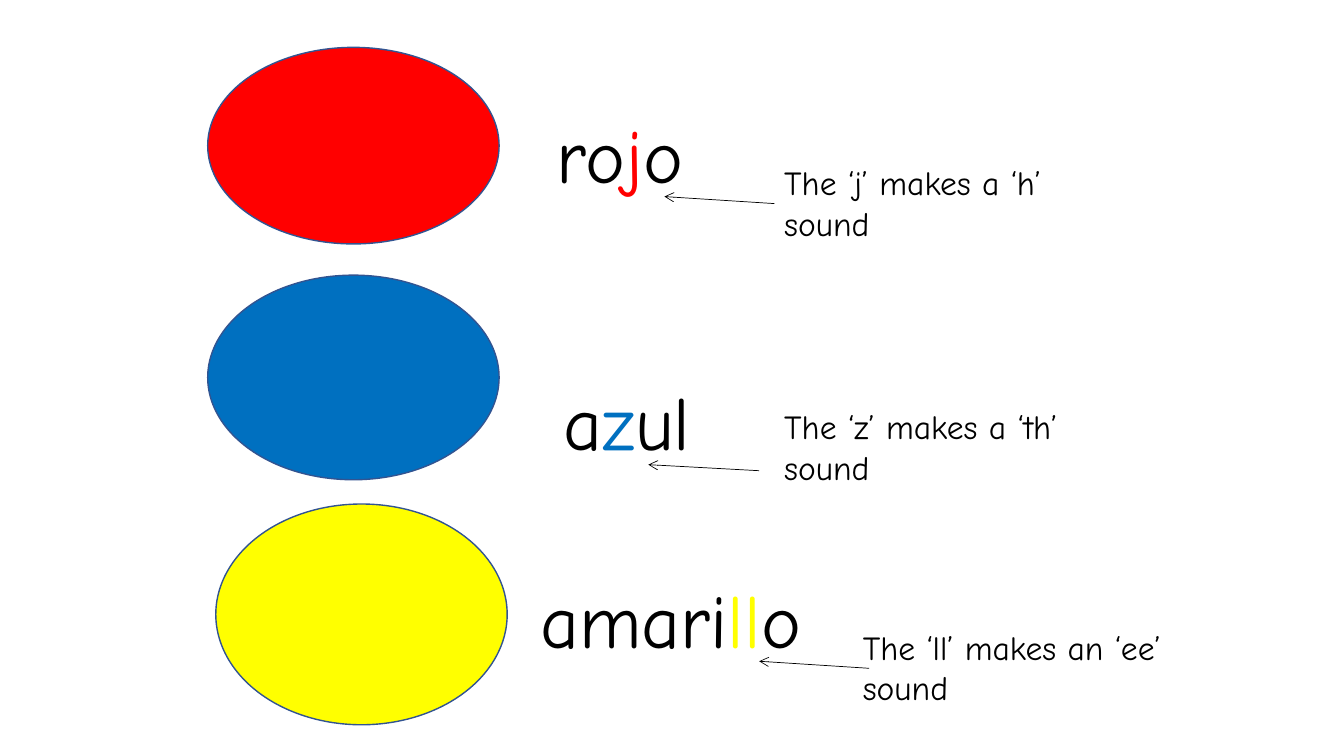
from lxml.etree import SubElement
from pptx import Presentation
from pptx.dml.color import RGBColor
from pptx.enum.shapes import MSO_CONNECTOR, MSO_SHAPE
from pptx.oxml.ns import qn
from pptx.util import Inches, Pt


def color(hex_string):
    return RGBColor.from_string(hex_string)


def add_text(box, runs, size):
    """Add a one-paragraph text box; runs are (text, hex colour) pairs."""
    frame = slide.shapes.add_textbox(*map(Inches, box)).text_frame
    frame.word_wrap = True
    paragraph = frame.paragraphs[0]
    paragraph.font.name = "Comic Neue"
    paragraph.font.size = Pt(size)
    for text, hex_string in runs:
        run = paragraph.add_run()
        run.text = text
        run.font.color.rgb = color(hex_string)


BLACK = "000000"

# Fill, ellipse box, word parts (middle one highlighted), word box,
# arrow (from x, from y, to x, to y), hint, hint left and top
COLOR_WORDS = [
    ("FF0000", (2.06, 0.47, 2.89, 1.95), ("ro", "j", "o"), (5.42, 1.02, 1.95, 1.01),
     (7.68, 2.02, 6.59, 1.95), "The ‘j’ makes a ‘h’ sound", (7.68, 1.56)),
    ("0070C0", (2.06, 2.73, 2.89, 2.03), ("a", "z", "ul"), (5.49, 3.67, 1.95, 1.01),
     (7.53, 4.67, 6.43, 4.61), "The ‘z’ makes a ‘th’ sound", (7.68, 3.98)),
    ("FFFF00", (2.14, 5, 2.89, 2.19), ("amari", "ll", "o"), (5.26, 5.63, 3.2, 1.01),
     (8.62, 6.63, 7.53, 6.56), "The ‘ll’ makes an ‘ee’ sound", (8.46, 6.17)),
]

presentation = Presentation()
presentation.slide_width = Inches(13.33)
presentation.slide_height = Inches(7.5)
slide = presentation.slides.add_slide(presentation.slide_layouts[6])

for fill, ellipse_box, word, word_box, arrow_ends, hint, hint_corner in COLOR_WORDS:
    ellipse = slide.shapes.add_shape(MSO_SHAPE.OVAL, *map(Inches, ellipse_box))
    ellipse.shadow.inherit = False
    ellipse.fill.solid()
    ellipse.fill.fore_color.rgb = color(fill)
    ellipse.line.color.rgb = color("325491")
    ellipse.line.width = Pt(1)

    add_text(word_box, zip(word, (BLACK, fill, BLACK)), 54)

    arrow = slide.shapes.add_connector(MSO_CONNECTOR.STRAIGHT, *map(Inches, arrow_ends))
    arrow.line.color.rgb = color(BLACK)
    arrow.line.width = Pt(0.5)
    SubElement(arrow.line._get_or_add_ln(), qn("a:tailEnd"), type="arrow")
    SubElement(arrow._element.spPr, qn("a:effectLst"))

    add_text((*hint_corner, 3.2, 0.91), [(hint, BLACK)], 24)

presentation.save("out.pptx")
